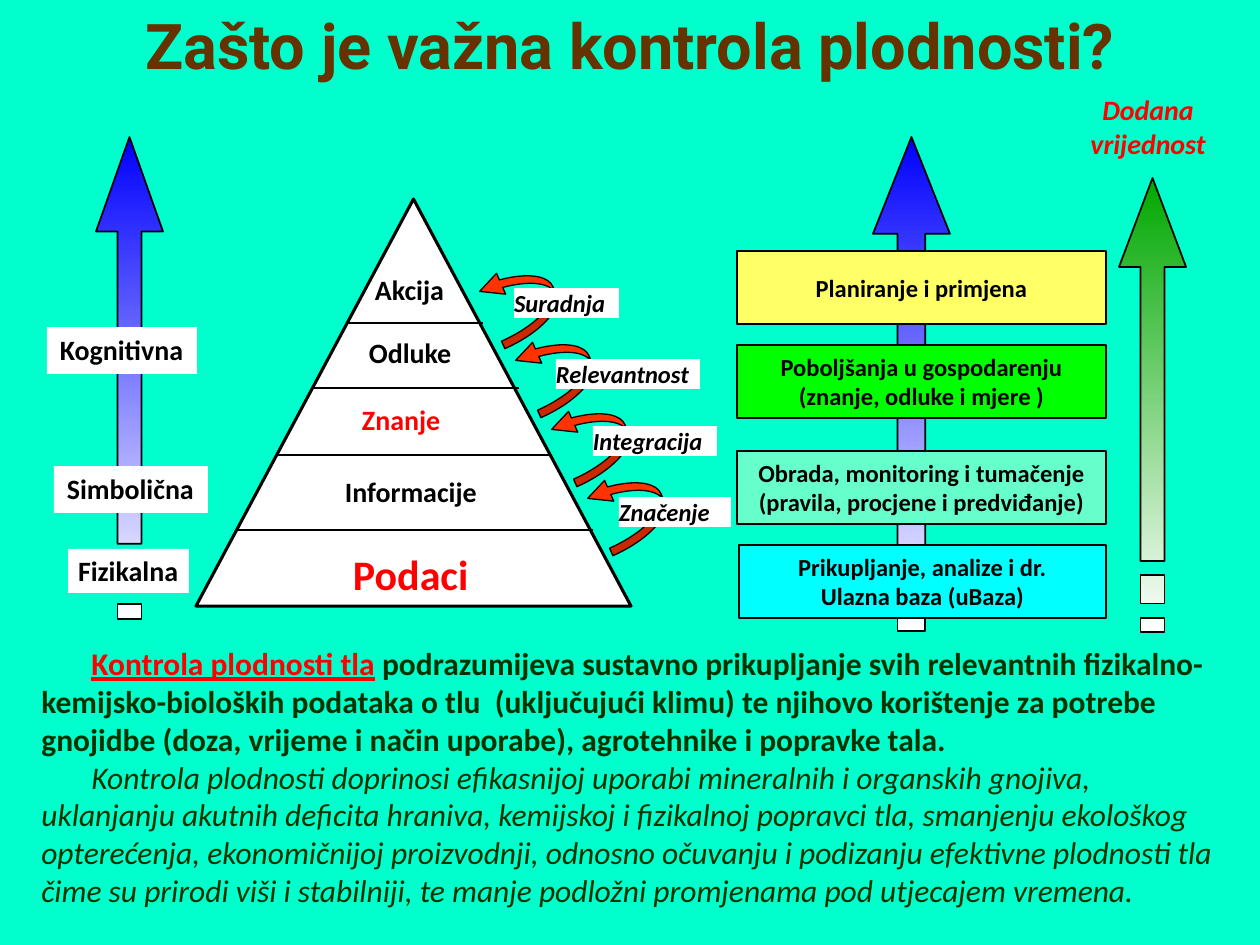
from dataclasses import dataclass

from lxml.etree import SubElement
from pptx import Presentation
from pptx.dml.color import RGBColor
from pptx.enum.shapes import MSO_CONNECTOR, MSO_SHAPE
from pptx.enum.text import MSO_ANCHOR, MSO_AUTO_SIZE, PP_ALIGN
from pptx.oxml.ns import qn
from pptx.util import Emu, Pt

PX = 914400 / 126
DEFAULT_INSETS = (13, 6, 13, 6)
NO_INSETS = (0, 0, 0, 0)
TIGHT_INSETS = (5, 5, 5, 5)
FIT = MSO_AUTO_SIZE.SHAPE_TO_FIT_TEXT


@dataclass(frozen=True)
class Theme:
    """Colours, fonts and type sizes of the slide."""

    background: str = "00FFCC"
    title: str = "663300"
    body: str = "003300"
    accent: str = "FF0000"
    ink: str = "000000"
    paper: str = "FFFFFF"
    arrow: str = "FF3300"
    level_arrow: str = "0000FF"
    value_arrow: str = "00A800"
    stages: tuple = ("00FFFF", "66FFCC", "00FF00", "FFFF66")
    title_font: str = "Roboto"
    font: str = "Calibri"
    title_size: int = 36
    base_size: int = 24
    body_size: int = 18
    label_size: int = 16
    small_size: int = 14


THEME = Theme()


def px(length):
    """Turn pixels into EMU."""
    return Emu(round(length * PX))


def box_px(box):
    """Turn a box in pixels into EMU."""
    return [px(length) for length in box]


def style_run(run, size, color=THEME.ink, bold=True, italic=False, font=THEME.font):
    """Format one run of text."""
    run.font.name, run.font.size = font, Pt(size)
    run.font.bold, run.font.italic = bold, italic
    run.font.color.rgb = RGBColor.from_string(color)


def write(shape, text, size, color=THEME.ink, italic=False, align=PP_ALIGN.LEFT,
          anchor=MSO_ANCHOR.TOP, insets=DEFAULT_INSETS, wrap=False, fit=FIT, font=THEME.font):
    """Put uniformly formatted text into a shape."""
    frame = shape.text_frame
    frame.text = text
    frame.word_wrap, frame.auto_size, frame.vertical_anchor = wrap, fit, anchor
    (frame.margin_left, frame.margin_top,
     frame.margin_right, frame.margin_bottom) = box_px(insets)
    for paragraph in frame.paragraphs:
        paragraph.alignment = align
        for run in paragraph.runs:
            style_run(run, size, color, italic=italic, font=font)


def set_line(shape, width):
    """Give a shape an ink outline, or none for zero width."""
    if width:
        shape.line.color.rgb = RGBColor.from_string(THEME.ink)
        shape.line.width = Pt(width)
    else:
        shape.line.fill.background()


def add_filled_shape(slide, kind, box, color, line_width=0):
    """Add a preset shape with a solid fill."""
    shape = slide.shapes.add_shape(kind, *box_px(box))
    shape.shadow.inherit = False
    shape.fill.solid()
    shape.fill.fore_color.rgb = RGBColor.from_string(color)
    set_line(shape, line_width)
    return shape


def add_text(slide, box, text, size, **options):
    """Add a text box."""
    write(slide.shapes.add_textbox(*box_px(box)), text, size, **options)


def add_striped_arrow(slide, box, color):
    """Add an upward arrow with two tail stripes that fades to white."""
    left, top, width, height = box
    right, inset = left + width, width * 0.32
    inner_left, inner_right = left + inset, right - inset
    head = top + height * 0.196
    body, stripe_top, stripe_bottom, tail = (top + height * part / 32 for part in (27, 28, 30, 31))
    contours = [
        [(inner_left, head), (inner_left, body), (inner_right, body), (inner_right, head),
         (right, head), (left + width / 2, top), (left, head)],
    ]
    for upper, lower in ((stripe_top, stripe_bottom), (tail, top + height)):
        contours.append([(inner_left, lower), (inner_right, lower),
                         (inner_right, upper), (inner_left, upper)])
    builder = slide.shapes.build_freeform(*map(px, contours[0][0]))
    for index, contour in enumerate(contours):
        points = [box_px(point) for point in contour]
        if index:
            builder.move_to(*points[0])
        builder.add_line_segments(points[1:], close=True)
    shape = builder.convert_to_shape()
    shape.shadow.inherit = False
    shape.fill.gradient()
    shape.fill.gradient_angle = 270
    for stop, stop_color in zip(shape.fill.gradient_stops, (color, THEME.paper)):
        stop.color.rgb = RGBColor.from_string(stop_color)
    set_line(shape, 1)


def add_divider(slide, left, right, y):
    """Add a horizontal line across the pyramid."""
    connector = slide.shapes.add_connector(MSO_CONNECTOR.STRAIGHT, px(left), px(y), px(right), px(y))
    set_line(connector, 1.5)
    SubElement(connector._element.spPr, qn("a:effectLst"))


def add_pyramid(slide):
    """Add the pyramid with its five levels."""
    add_filled_shape(slide, MSO_SHAPE.ISOSCELES_TRIANGLE, (196, 199, 435, 407), THEME.paper, 1.75)
    for left, right, y in ((237, 593, 530), (275, 551, 455), (312, 519, 388), (348, 483, 323)):
        add_divider(slide, left, right, y)
    levels = [
        ((340, 543, 146, 63), "Podaci", THEME.base_size, THEME.accent),
        ((332, 469, 163, 47), "Informacije", THEME.label_size, THEME.ink),
        ((349, 397, 109, 47), "Znanje", THEME.label_size, THEME.accent),
        ((356, 330, 116, 47), "Odluke", THEME.label_size, THEME.ink),
        ((362, 267, 100, 47), "Akcija", THEME.label_size, THEME.ink),
    ]
    for box, text, size, color in levels:
        add_text(slide, box, text, size, color=color)


def add_steps(slide):
    """Add the curved arrows between levels and their labels."""
    for step in range(4):
        box = (595 - 36 * step, 471 - 69 * step, 69, 74)
        arrow = add_filled_shape(slide, MSO_SHAPE.CURVED_LEFT_ARROW, box, THEME.arrow, 0.75)
        arrow.rotation = 336.2
        arrow._element.spPr.xfrm.set("flipV", "1")
        for index, value in enumerate((0.12, 0.33, 0.33)):
            arrow.adjustments[index] = value
    labels = [((619, 497, 112, 30), "Značenje"), ((593, 426, 124, 30), "Integracija"),
              ((556, 359, 144, 30), "Relevantnost"), ((514, 288, 105, 30), "Suradnja")]
    for box, text in labels:
        label = add_filled_shape(slide, MSO_SHAPE.RECTANGLE, box, THEME.paper)
        write(label, text, THEME.small_size, italic=True, insets=NO_INSETS, wrap=True)


def add_level_labels(slide):
    """Add the labels over the left arrow."""
    labels = [((68, 549, 121, 44), "Fizikalna", (10, 5, 10, 5)),
              ((54, 466, 154, 47), "Simbolična", DEFAULT_INSETS),
              ((47, 327, 150, 47), "Kognitivna", DEFAULT_INSETS)]
    for box, text, insets in labels:
        label = add_filled_shape(slide, MSO_SHAPE.RECTANGLE, box, THEME.paper)
        write(label, text, THEME.label_size, insets=insets)


def add_stages(slide):
    """Add the coloured stage boxes over the right arrow."""
    stages = [
        (739, 545, "Prikupljanje, analize i dr.\nUlazna baza (uBaza)"),
        (737, 451, "Obrada, monitoring i tumačenje\n(pravila, procjene i predviđanje)"),
        (737, 345, "Poboljšanja u gospodarenju\n(znanje, odluke i mjere )"),
        (737, 251, "Planiranje i primjena"),
    ]
    for (left, top, text), color in zip(stages, THEME.stages):
        stage = add_filled_shape(slide, MSO_SHAPE.RECTANGLE, (left, top, 1106 - left, 73), color, 1)
        write(stage, text, THEME.small_size, align=PP_ALIGN.CENTER, anchor=MSO_ANCHOR.MIDDLE,
              insets=TIGHT_INSETS, fit=MSO_AUTO_SIZE.NONE)


def add_summary(slide):
    """Add the two indented paragraphs of explanation."""
    frame = slide.shapes.add_textbox(*box_px((29, 638, 1200, 285))).text_frame
    frame.word_wrap, frame.auto_size = True, FIT
    definition, benefit = frame.paragraphs[0], frame.add_paragraph()
    term, meaning = definition.add_run(), definition.add_run()
    term.text = "Kontrola plodnosti tla"
    meaning.text = (
        " podrazumijeva sustavno prikupljanje svih relevantnih fizikalno-kemijsko-bioloških "
        "podataka o tlu  (uključujući klimu) te njihovo korištenje za potrebe gnojidbe "
        "(doza, vrijeme i način uporabe), agrotehnike i popravke tala.")
    benefit.text = (
        "Kontrola plodnosti doprinosi efikasnijoj uporabi mineralnih i organskih gnojiva, "
        "uklanjanju akutnih deficita hraniva, kemijskoj i fizikalnoj popravci tla, smanjenju "
        "ekološkog opterećenja, ekonomičnijoj proizvodnji, odnosno očuvanju i podizanju "
        "efektivne plodnosti tla čime su prirodi viši i stabilniji, te manje podložni "
        "promjenama pod utjecajem vremena.")
    style_run(term, THEME.body_size, THEME.accent)
    term.font.underline = True
    style_run(meaning, THEME.body_size, THEME.body)
    style_run(benefit.runs[0], THEME.body_size, THEME.body, bold=False, italic=True)
    for paragraph in frame.paragraphs:
        properties = paragraph._p.get_or_add_pPr()
        properties.set("marL", "0")
        properties.set("indent", str(px(50)))


def add_title(slide):
    """Place and format the title placeholder."""
    title = slide.shapes.title
    title.left, title.top, title.width, title.height = box_px((30, 6, 1200, 77))
    write(title, "Zašto je važna kontrola plodnosti?", THEME.title_size, color=THEME.title,
          align=PP_ALIGN.CENTER, anchor=MSO_ANCHOR.MIDDLE, wrap=True,
          fit=MSO_AUTO_SIZE.NONE, font=THEME.title_font)


def main():
    """Build and save the slide."""
    presentation = Presentation()
    presentation.slide_width, presentation.slide_height = px(1260), px(945)
    slide = presentation.slides.add_slide(presentation.slide_layouts[5])
    slide.background.fill.solid()
    slide.background.fill.fore_color.rgb = RGBColor.from_string(THEME.background)
    add_title(slide)
    add_striped_arrow(slide, (1119, 178, 67, 454), THEME.value_arrow)
    add_text(slide, (1075, 87, 146, 81), "Dodana vrijednost", THEME.label_size,
             color=THEME.accent, italic=True, align=PP_ALIGN.CENTER, wrap=True)
    add_striped_arrow(slide, (873, 137, 77, 494), THEME.level_arrow)
    add_pyramid(slide)
    add_steps(slide)
    add_striped_arrow(slide, (96, 137, 67, 482), THEME.level_arrow)
    add_level_labels(slide)
    add_stages(slide)
    add_summary(slide)
    presentation.save("out.pptx")


if __name__ == "__main__":
    main()
